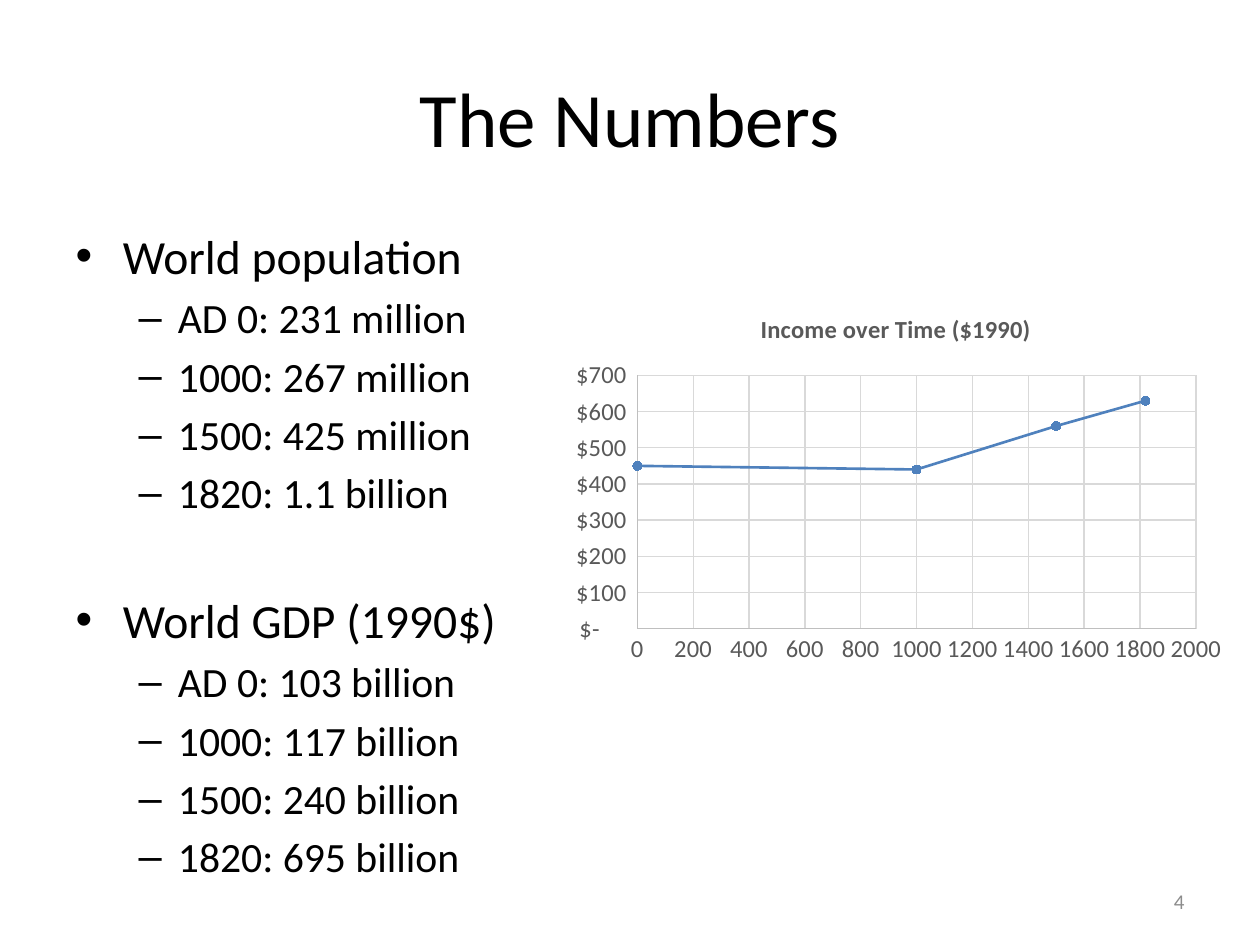
from pptx import Presentation
from pptx.chart.data import XyChartData
from pptx.dml.color import RGBColor
from pptx.enum.chart import XL_CHART_TYPE, XL_MARKER_STYLE, XL_TICK_MARK
from pptx.enum.text import MSO_ANCHOR, MSO_AUTO_SIZE, PP_ALIGN
from pptx.util import Inches, Pt

SCATTER = XL_CHART_TYPE.XY_SCATTER_SMOOTH
CIRCLE = XL_MARKER_STYLE.CIRCLE
NO_TICK = XL_TICK_MARK.NONE
MIDDLE = MSO_ANCHOR.MIDDLE
NO_FIT = MSO_AUTO_SIZE.NONE
CENTER, RIGHT = PP_ALIGN.CENTER, PP_ALIGN.RIGHT

FONT = "Calibri"
BLACK, GRAY, BLUE = "000000", "595959", "4F81BD"
DOLLARS = '_("$"* #,##0_);_("$"* \\(#,##0\\);_("$"* "-"??_);_(@_)'
SECTIONS = [
    ("World population", ["AD 0: 231 million", "1000: 267 million",
                          "1500: 425 million", "1820: 1.1 billion"]),
    ("World GDP (1990$)", ["AD 0: 103 billion", "1000: 117 billion",
                           "1500: 240 billion", "1820: 695 billion"]),
]
INCOME = [(0, 450), (1000, 440), (1500, 560), (1820, 630)]


def rgb(value):
    """Turn a hex string into a colour."""
    return RGBColor.from_string(value)


def set_font(font, size, color, bold=False):
    """Set the face, size, colour and weight of a font."""
    font.name, font.size, font.bold = FONT, Pt(size), bold
    font.color.rgb = rgb(color)


def set_line(line, color, width):
    """Set the colour and width of a line."""
    line.color.rgb = rgb(color)
    line.width = Pt(width)


def place(sp, left, top, width, height):
    """Move and size a shape in inches."""
    sp.left, sp.top = Inches(left), Inches(top)
    sp.width, sp.height = Inches(width), Inches(height)


def add_run(p, text, size, color=BLACK):
    """Add one formatted run to a paragraph."""
    r = p.add_run()
    r.text = text
    set_font(r.font, size, color)


def fill_title(sp, text):
    """Place the title and write its text."""
    place(sp, 0.5, 0.3, 9, 1.25)
    tf = sp.text_frame
    tf.vertical_anchor = MIDDLE
    p = tf.paragraphs[0]
    p.alignment = CENTER
    add_run(p, text, 44)


def fill_list(sp, sections):
    """Write headings and their items as a two-level list."""
    place(sp, 0.5, 1.75, 4.08, 4.95)
    tf = sp.text_frame
    tf.auto_size = NO_FIT
    for i, (heading, items) in enumerate(sections):
        p = tf.add_paragraph() if i else tf.paragraphs[0]
        if i:
            p.space_before = Pt(42)
        add_run(p, heading, 27.2)
        for item in items:
            p = tf.add_paragraph()
            p.level = 1
            add_run(p, item, 23.8)


def add_page_number(slide, number):
    """Add the page number at the lower right."""
    sp = slide.shapes.add_textbox(Inches(7.17), Inches(6.95), Inches(2.33), Inches(0.4))
    tf = sp.text_frame
    tf.word_wrap = True
    tf.vertical_anchor = MIDDLE
    p = tf.paragraphs[0]
    p.alignment = RIGHT
    add_run(p, number, 12, "8C8C8C")


def format_axis(axis, top, step, number_format):
    """Set the scale, labels, line and grid of an axis."""
    axis.minimum_scale, axis.maximum_scale, axis.major_unit = 0, top, step
    axis.major_tick_mark = axis.minor_tick_mark = NO_TICK
    axis.has_major_gridlines = True
    set_line(axis.major_gridlines.format.line, "D9D9D9", 0.75)
    set_line(axis.format.line, "BFBFBF", 0.75)
    labels = axis.tick_labels
    labels.number_format, labels.number_format_is_linked = number_format, False
    set_font(labels.font, 14, GRAY)


def add_curve(slide, title, points):
    """Add a smooth scatter chart with one series."""
    data = XyChartData()
    series = data.add_series(title)
    for x, y in points:
        series.add_data_point(x, y)
    chart = slide.shapes.add_chart(SCATTER, Inches(4.42), Inches(2.33),
                                   Inches(5.38), Inches(3), data).chart
    set_font(chart.font, 10, BLACK)
    chart.has_legend = False
    chart.has_title = True
    r = chart.chart_title.text_frame.paragraphs[0].add_run()
    r.text = title
    set_font(r.font, 14, GRAY, bold=True)
    format_axis(chart.category_axis, 2000, 200, "General")
    format_axis(chart.value_axis, 700, 100, DOLLARS)
    plot = chart.plots[0]
    plot.vary_by_categories = False
    curve = plot.series[0]
    curve.smooth = True
    set_line(curve.format.line, BLUE, 1.5)
    marker = curve.marker
    marker.style, marker.size = CIRCLE, 5
    marker.format.fill.solid()
    marker.format.fill.fore_color.rgb = rgb(BLUE)
    set_line(marker.format.line, BLUE, 0.75)


def main():
    """Build the slide and save it."""
    prs = Presentation()
    prs.slide_width, prs.slide_height = Inches(10), Inches(7.5)
    slide = prs.slides.add_slide(prs.slide_layouts[1])
    fill_title(slide.shapes.title, "The Numbers")
    fill_list(slide.placeholders[1], SECTIONS)
    add_page_number(slide, "4")
    add_curve(slide, "Income over Time ($1990)", INCOME)
    prs.save("out.pptx")


if __name__ == "__main__":
    main()
